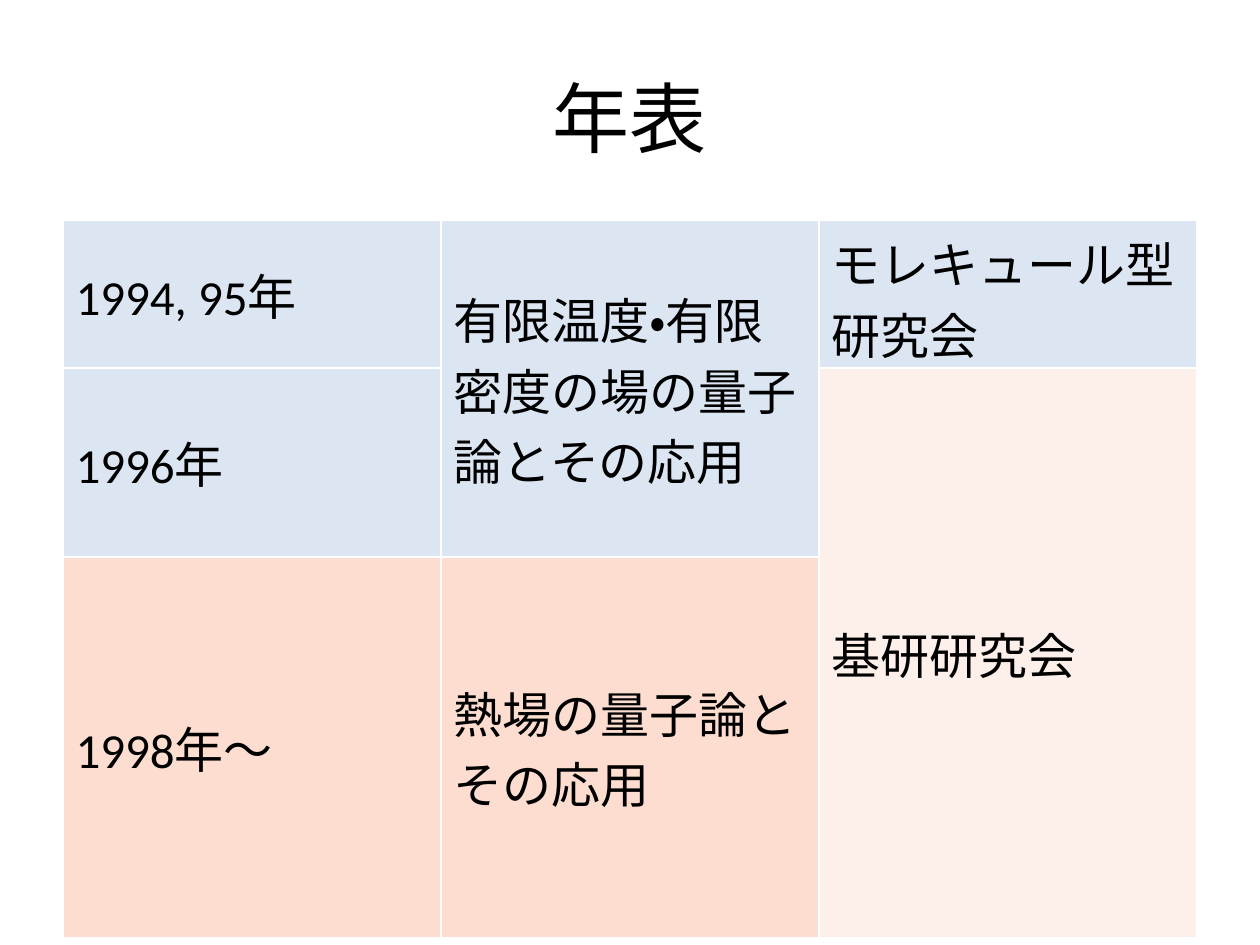
"""Build a one-slide chronology of workshop names and formats."""
import lxml.etree
import pptx
import pptx.dml.color
import pptx.enum.lang
import pptx.enum.text
import pptx.oxml.ns
import pptx.util

TITLE = "年表"
ROWS = [
    [("1994, 95年", "blue"), ("有限温度・有限密度の場の量子論とその応用", "blue"),
     ("モレキュール型研究会", "blue")],
    [("1996年", "blue"), None, ("基研研究会", "pale")],
    [("1998年〜", "peach"), ("熱場の量子論とその応用", "peach"), None],
]
MERGES = [((0, 1), (1, 1)), ((1, 2), (2, 2))]
HEIGHTS = [1.17, 0.92, 3.02]
COLORS = {"blue": "DCE6F2", "pale": "FDEFE9", "peach": "FCDDCF",
          "white": "FFFFFF", "black": "000000"}
WIDE, HIGH = 10, 7.5
EDGE = WIDE / 20
SPAN = WIDE - 2 * EDGE
FONT = {"name": "Calibri", "language_id": pptx.enum.lang.MSO_LANGUAGE_ID.JAPANESE}
MIDDLE = pptx.enum.text.MSO_ANCHOR.MIDDLE
inch = pptx.util.Inches
qn = pptx.oxml.ns.qn


def tint(key):
    return pptx.dml.color.RGBColor.from_string(COLORS[key])


def write(frame, text, size, align):
    para = frame.paragraphs[0]
    para.alignment = align
    run = para.add_run()
    run.text = text
    for key, value in {**FONT, "size": pptx.util.Pt(size)}.items():
        setattr(run.font, key, value)
    run.font.color.rgb = tint("black")


def border(cell):
    props = cell._tc.get_or_add_tcPr()
    for side in ("lnL", "lnR", "lnT", "lnB"):
        line = lxml.etree.SubElement(props, qn("a:" + side), w=str(pptx.util.Pt(1)))
        fill = lxml.etree.SubElement(line, qn("a:solidFill"))
        lxml.etree.SubElement(fill, qn("a:srgbClr"), val=COLORS["white"])


def main():
    deck = pptx.Presentation()
    deck.slide_width, deck.slide_height = inch(WIDE), inch(HIGH)
    slide = deck.slides.add_slide(deck.slide_layouts[6])

    title = slide.shapes.add_textbox(inch(EDGE), inch(0.3), inch(SPAN), inch(HIGH / 6))
    for key, value in {"word_wrap": True, "vertical_anchor": MIDDLE}.items():
        setattr(title.text_frame, key, value)
    write(title.text_frame, TITLE, 44, pptx.enum.text.PP_ALIGN.CENTER)

    count = len(ROWS[0])
    table = slide.shapes.add_table(len(ROWS), count, inch(EDGE), inch(1.75),
                                   inch(SPAN), inch(sum(HEIGHTS))).table
    for key in ("first_row", "horz_banding"):
        setattr(table, key, False)
    for col in table.columns:
        col.width = inch(SPAN / count)
    for row, high in zip(table.rows, HEIGHTS):
        row.height = inch(high)
    for start, end in MERGES:
        table.cell(*start).merge(table.cell(*end))

    for r, row in enumerate(ROWS):
        for c, item in enumerate(row):
            cell = table.cell(r, c)
            border(cell)
            text, color = item or ("", ROWS[r - 1][c][1])
            cell.fill.solid()
            cell.fill.fore_color.rgb = tint(color)
            cell.vertical_anchor = MIDDLE
            if item:
                write(cell.text_frame, text, 28, pptx.enum.text.PP_ALIGN.LEFT)

    deck.save("out.pptx")


if __name__ == "__main__":
    main()
